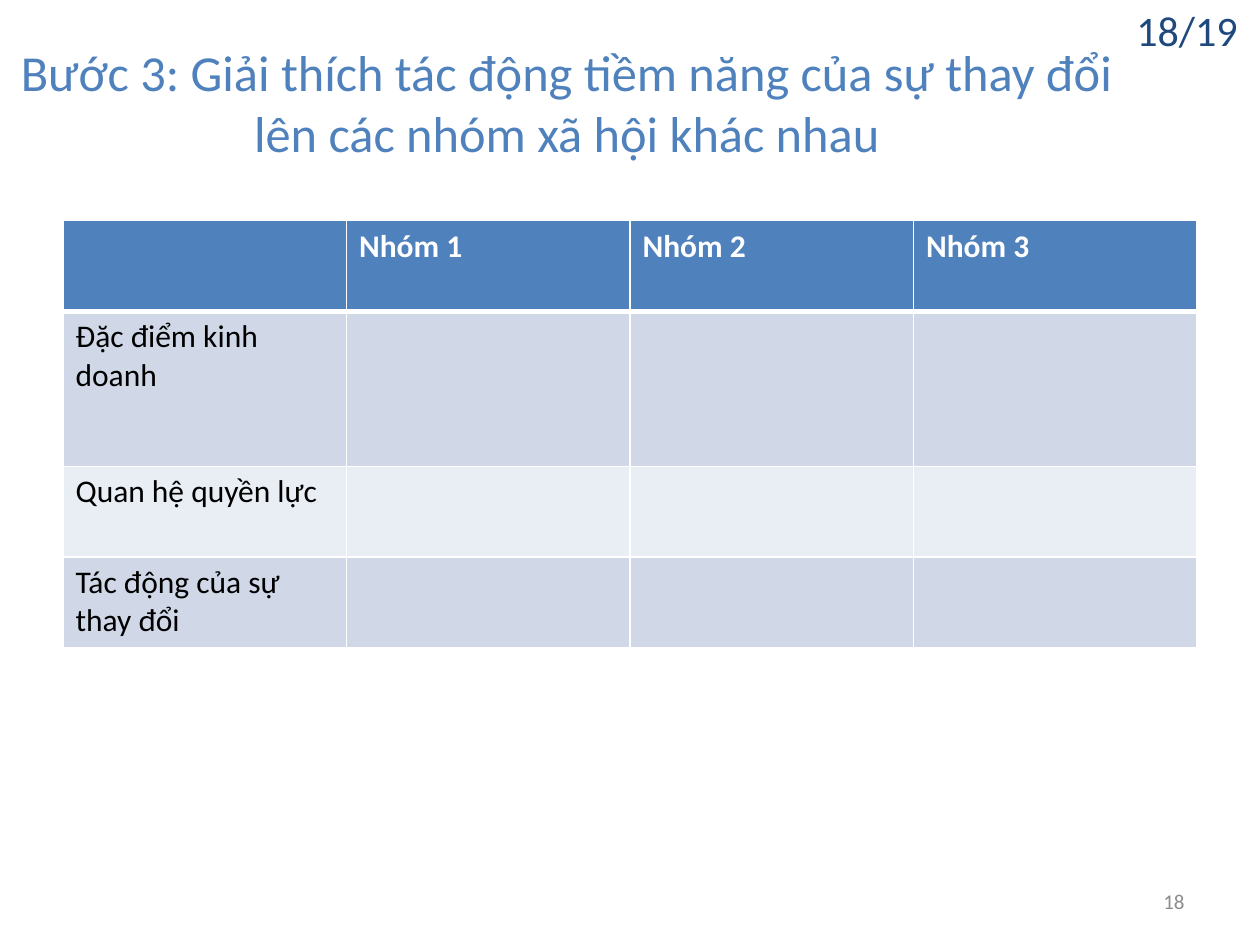
from dataclasses import dataclass

from lxml import etree
from pptx import Presentation
from pptx import util as u
from pptx.dml import color
from pptx.enum import text
from pptx.oxml import ns


@dataclass(frozen=True)
class Theme:
    """Colours, type sizes and line widths of the slide."""
    font: str = "Calibri"
    blue: str = "4F81BD"
    navy: str = "1F497D"
    grey: str = "8C8C8C"
    white: str = "FFFFFF"
    black: str = "000000"
    bands: tuple = ("D0D8E8", "E9EDF4")
    title: float = 28.8
    count: float = 24
    body: float = 18
    foot: float = 12
    thin: float = 1
    thick: float = 3


THEME = Theme()
HEADS = ("", "Nhóm 1", "Nhóm 2", "Nhóm 3")
LABELS = ("Đặc điểm kinh doanh", "Quan hệ quyền lực", "Tác động của sự thay đổi")
ROWS = (1.83, 3.12, 1.83, 1.83)


def add_run(para, words, size, hue, bold=False):
    """Add one styled run to a paragraph."""
    run = para.add_run()
    run.text = words
    font = run.font
    font.name, font.size, font.bold = THEME.font, u.Pt(size), bold
    font.color.rgb = color.RGBColor.from_string(hue)


def add_label(slide, box, words, size, hue, align):
    """Place a wrapped, vertically centred text in the given box."""
    frame = slide.shapes.add_textbox(*map(u.Cm, box)).text_frame
    frame.word_wrap = True
    frame.vertical_anchor = text.MSO_ANCHOR.MIDDLE
    para = frame.paragraphs[0]
    para.alignment = align
    add_run(para, words, size, hue)


def add_edge(cell, side, width):
    """Draw one white border of a cell."""
    props = cell._tc.get_or_add_tcPr()
    line = etree.SubElement(props, ns.qn(f"a:ln{side}"), w=str(u.Pt(width)))
    fill = etree.SubElement(line, ns.qn("a:solidFill"))
    etree.SubElement(fill, ns.qn("a:srgbClr"), val=THEME.white)


def style_cell(cell, row):
    """Give a cell the borders and fill of its row."""
    top = THEME.thick if row == 1 else THEME.thin
    base = THEME.thick if row == 0 else THEME.thin
    for side, width in zip("LRTB", (THEME.thin, THEME.thin, top, base)):
        add_edge(cell, side, width)
    hue = THEME.bands[(row - 1) % 2] if row else THEME.blue
    cell.fill.solid()
    cell.fill.fore_color.rgb = color.RGBColor.from_string(hue)


def add_grid(slide, box):
    """Place the table of social groups in the given box."""
    shape = slide.shapes.add_table(len(ROWS), len(HEADS), *map(u.Cm, box))
    table = shape.table
    for row, height in zip(table.rows, ROWS):
        row.height = u.Cm(height)
    for col in table.columns:
        col.width = u.Cm(box[2] / len(HEADS))
    lines = [HEADS] + [(name,) + ("",) * (len(HEADS) - 1) for name in LABELS]
    for r, line in enumerate(lines):
        for c, words in enumerate(line):
            cell = table.cell(r, c)
            style_cell(cell, r)
            if words:
                hue = THEME.black if r else THEME.white
                add_run(cell.text_frame.paragraphs[0], words, THEME.body, hue, r == 0)


def main():
    """Build and save the slide."""
    deck = Presentation()
    deck.slide_width, deck.slide_height = u.Cm(25.4), u.Cm(19.05)
    slide = deck.slides.add_slide(deck.slide_layouts[6])
    align = text.PP_ALIGN
    add_label(slide, (18.2, 17.65, 5.93, 1.02), "18", THEME.foot, THEME.grey, align.RIGHT)
    add_label(slide, (0, 0.69, 22.86, 2.72),
              "Bước 3: Giải thích tác động tiềm năng của sự thay đổi lên các nhóm xã hội khác nhau",
              THEME.title, THEME.blue, align.CENTER)
    add_label(slide, (21.82, -0.08, 3.38, 1.35), "18/19", THEME.count, THEME.navy, align.RIGHT)
    add_grid(slide, (1.27, 4.45, 22.86, sum(ROWS)))
    deck.save("out.pptx")


if __name__ == "__main__":
    main()
